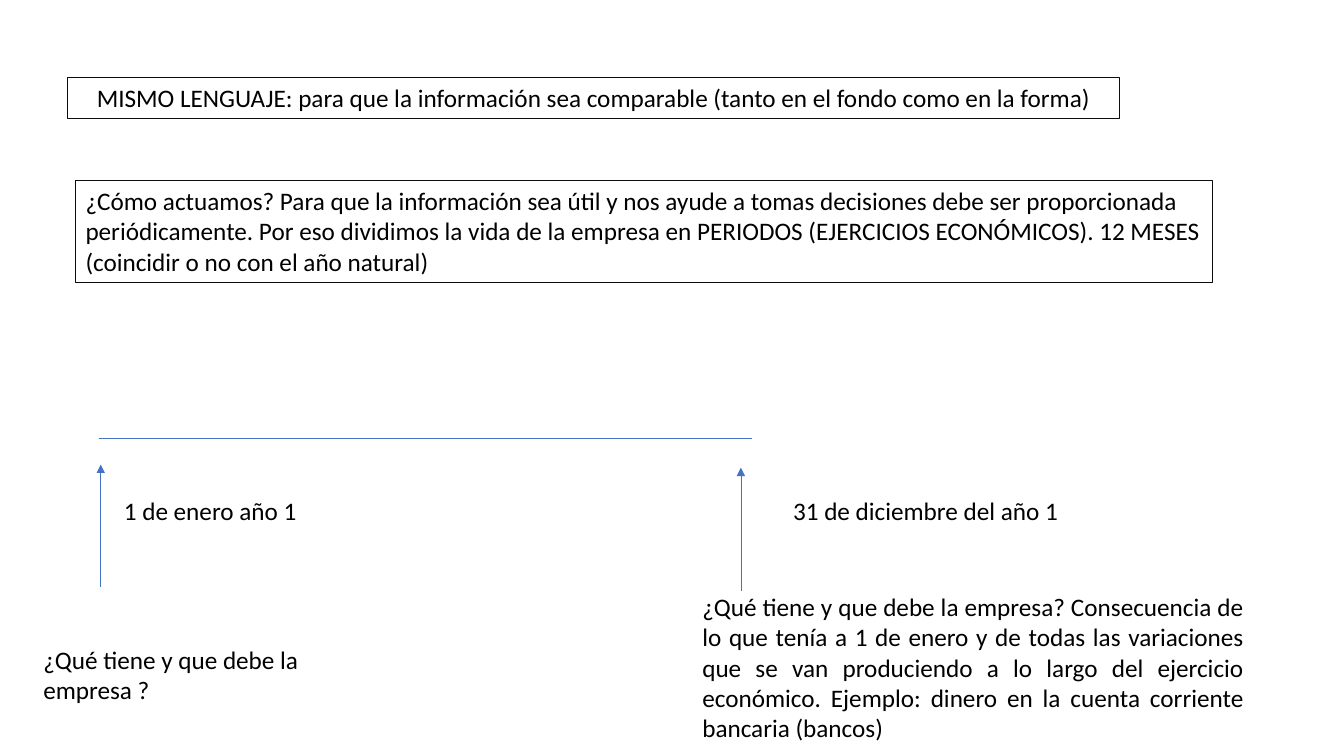
from lxml.etree import SubElement
from pptx import Presentation
from pptx.dml.color import RGBColor
from pptx.enum.shapes import MSO_CONNECTOR as Link, MSO_SHAPE as Form
from pptx.enum.text import MSO_ANCHOR as Anchor, MSO_AUTO_SIZE as Fit, PP_ALIGN as Align
from pptx.oxml.ns import qn
from pptx.util import Pt

FONT, SIZE = "Calibri", 18
INK, EDGE, BLUE = "000000", "0D0D0D", "4472C4"

BOXES = [
    ("MISMO LENGUAJE: para que la información sea comparable "
     "(tanto en el fondo como en la forma)",
     (48.2, 55.4, 751.7, 29), Align.CENTER),
    ("¿Cómo actuamos? Para que la información sea útil y nos ayude a tomas "
     "decisiones debe ser proporcionada periódicamente. Por eso dividimos la "
     "vida de la empresa en PERIODOS (EJERCICIOS ECONÓMICOS). 12 MESES "
     "(coincidir o no con el año natural)",
     (54, 128.9, 812.2, 72.7), Align.LEFT),
]
NOTES = [
    ("1 de enero año 1", (81.4, 350.6, 153.4, 29), Align.LEFT),
    ("31 de diciembre del año 1", (559.4, 350.6, 221.8, 29), Align.LEFT),
    ("¿Qué tiene y que debe la empresa ?",
     (23.8, 456.5, 238.3, 51), Align.LEFT),
    ("¿Qué tiene y que debe la empresa? Consecuencia de lo que tenía a 1 de "
     "enero y de todas las variaciones que se van produciendo a lo largo del "
     "ejercicio económico. Ejemplo: dinero en la cuenta corriente bancaria "
     "(bancos)",
     (494.6, 419, 401, 116.6), Align.JUSTIFY),
]
LINES = [
    ((70.6, 312.8, 537.5, 312.8), False),
    ((72, 419, 72, 331.9), True),
    ((529.2, 421.9, 529.2, 334.1), True),
]


def color(code):
    return RGBColor.from_string(code)


def write(shape, text, align):
    frame = shape.text_frame
    frame.word_wrap = True
    frame.auto_size = Fit.SHAPE_TO_FIT_TEXT
    para = frame.paragraphs[0]
    para.text = text
    para.alignment = align
    para.font.name = FONT
    para.font.size = Pt(SIZE)
    para.font.color.rgb = color(INK)


def add_box(slide, text, place, align):
    box = slide.shapes.add_shape(Form.RECTANGLE, *map(Pt, place))
    box.shadow.inherit = False
    box.fill.background()
    box.line.color.rgb = color(EDGE)
    box.line.width = Pt(0.75)
    box.text_frame.vertical_anchor = Anchor.TOP
    write(box, text, align)


def add_note(slide, text, place, align):
    write(slide.shapes.add_textbox(*map(Pt, place)), text, align)


def add_line(slide, ends, arrow):
    line = slide.shapes.add_connector(Link.STRAIGHT, *map(Pt, ends))
    line.line.color.rgb = color(BLUE)
    line.line.width = Pt(0.5)
    if arrow:
        SubElement(line.line._get_or_add_ln(), qn("a:tailEnd"), type="triangle")
    SubElement(line._element.spPr, qn("a:effectLst"))


def main():
    deck = Presentation()
    deck.slide_width, deck.slide_height = Pt(960), Pt(540)
    slide = deck.slides.add_slide(deck.slide_layouts[6])
    for box in BOXES:
        add_box(slide, *box)
    for line in LINES:
        add_line(slide, *line)
    for note in NOTES:
        add_note(slide, *note)
    deck.save("out.pptx")


if __name__ == "__main__":
    main()
